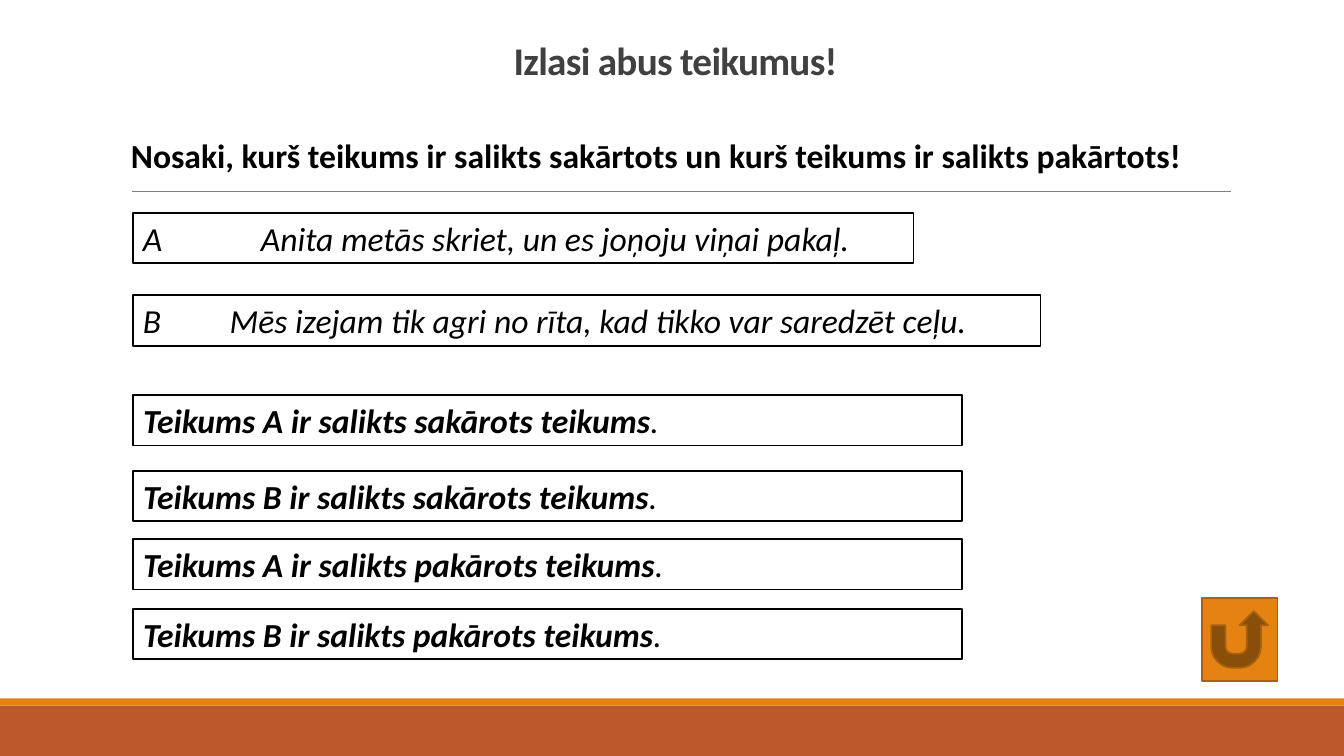
"""Build a Latvian grammar slide on compound and complex sentences."""
from pptx import Presentation
from pptx.dml.color import RGBColor
from pptx.enum.shapes import MSO_CONNECTOR, MSO_SHAPE
from pptx.enum.text import MSO_ANCHOR, PP_ALIGN
from pptx.oxml.ns import qn
from pptx.util import Inches, Pt
from lxml import etree

RECT = MSO_SHAPE.RECTANGLE
BACK = MSO_SHAPE.ACTION_BUTTON_RETURN
LINE = MSO_CONNECTOR.STRAIGHT
LEFT, CENTER = PP_ALIGN.LEFT, PP_ALIGN.CENTER
TOP, BOTTOM = MSO_ANCHOR.TOP, MSO_ANCHOR.BOTTOM

TITLE = "Izlasi abus teikumus!"
TASK = "Nosaki, kurš teikums ir salikts sakārtots un kurš teikums ir salikts pakārtots!"
SAMPLES = [
    ("A", "Anita metās skriet, un es joņoju viņai pakaļ.", 2.11, 7.74, 1.17),
    ("B", "Mēs izejam tik agri no rīta, kad tikko var saredzēt ceļu.", 2.93, 9, 0.86),
]
ANSWERS = [
    ("Teikums A ir salikts sakārots teikums", 3.92),
    ("Teikums B ir salikts sakārots teikums", 4.67),
    ("Teikums A ir salikts pakārots teikums", 5.35),
    ("Teikums B ir salikts pakārots teikums", 6.04),
]
BANDS = [(7, 0.5, "rust"), (6.93, 0.07, "orange")]
THEME = {
    "font": "Calibri", "title": 28, "body": 24,
    "black": "000000", "white": "FFFFFF", "dark": "404040", "gray": "808080",
    "rust": "BD582C", "orange": "E48312", "brown": "A9610D",
}
WIDE, HIGH = 13.33, 7.5
EDGE, ROW, ANSWER = 1.32, 0.5, 8.22


def color(name):
    return RGBColor.from_string(THEME[name])


def add_run(para, text, size="body", ink="black", bold=False, slant=False):
    run = para.add_run()
    run.text = text
    font = run.font
    font.name, font.size = THEME["font"], Pt(THEME[size])
    font.color.rgb = color(ink)
    font.bold, font.italic = bold, slant
    return run


def add_shape(slide, kind, area, fill, edge=None):
    shape = slide.shapes.add_shape(kind, *map(Inches, area))
    shape.shadow.inherit = False
    shape.fill.solid()
    shape.fill.fore_color.rgb = color(fill)
    if edge:
        shape.line.color.rgb = color(edge)
        shape.line.width = Pt(1.25)
    else:
        shape.line.fill.background()
    return shape


def set_frame(shape, anchor=TOP, align=LEFT):
    frame = shape.text_frame
    frame.word_wrap = True
    frame.vertical_anchor = anchor
    para = frame.paragraphs[0]
    para.alignment = align
    return para


def add_box(slide, top, width):
    area = (EDGE, top, width, ROW)
    return set_frame(add_shape(slide, RECT, area, "white", "black"))


def add_text(slide, area, anchor=TOP, align=LEFT):
    return set_frame(slide.shapes.add_textbox(*map(Inches, area)), anchor, align)


def set_tab(para, pos):
    tabs = etree.SubElement(para._p.get_or_add_pPr(), qn("a:tabLst"))
    etree.SubElement(tabs, qn("a:tab"), pos=str(Inches(pos)), algn="l")


def add_rule(slide):
    ends = (1.31, 1.9, 12.21, 1.9)
    rule = slide.shapes.add_connector(LINE, *map(Inches, ends))
    rule.line.color.rgb = color("gray")
    rule.line.width = Pt(0.5)
    etree.SubElement(rule._element.spPr, qn("a:effectLst"))


def main():
    deck = Presentation()
    deck.slide_width, deck.slide_height = Inches(WIDE), Inches(HIGH)
    slide = deck.slides.add_slide(deck.slide_layouts[6])

    for top, height, fill in BANDS:
        add_shape(slide, RECT, (0, top, WIDE, height), fill)
    add_rule(slide)

    para = add_text(slide, (1.2, 0.31, 11, 0.57), BOTTOM, CENTER)
    para.line_spacing = 0.85
    run = add_run(para, TITLE, "title", "dark", bold=True)
    run.font._element.set("spc", "-50")

    add_run(add_text(slide, (1.2, 1.29, 11.08, ROW)), TASK, bold=True)

    for mark, text, top, width, tab in SAMPLES:
        para = add_box(slide, top, width)
        set_tab(para, tab)
        add_run(para, f"{mark}\t{text}", slant=True)

    for text, top in ANSWERS:
        para = add_box(slide, top, ANSWER)
        add_run(para, text, bold=True, slant=True)
        add_run(para, ".", slant=True)

    add_shape(slide, BACK, (11.92, 5.93, 0.75, 0.83), "orange", "brown")
    deck.save("out.pptx")


if __name__ == "__main__":
    main()
